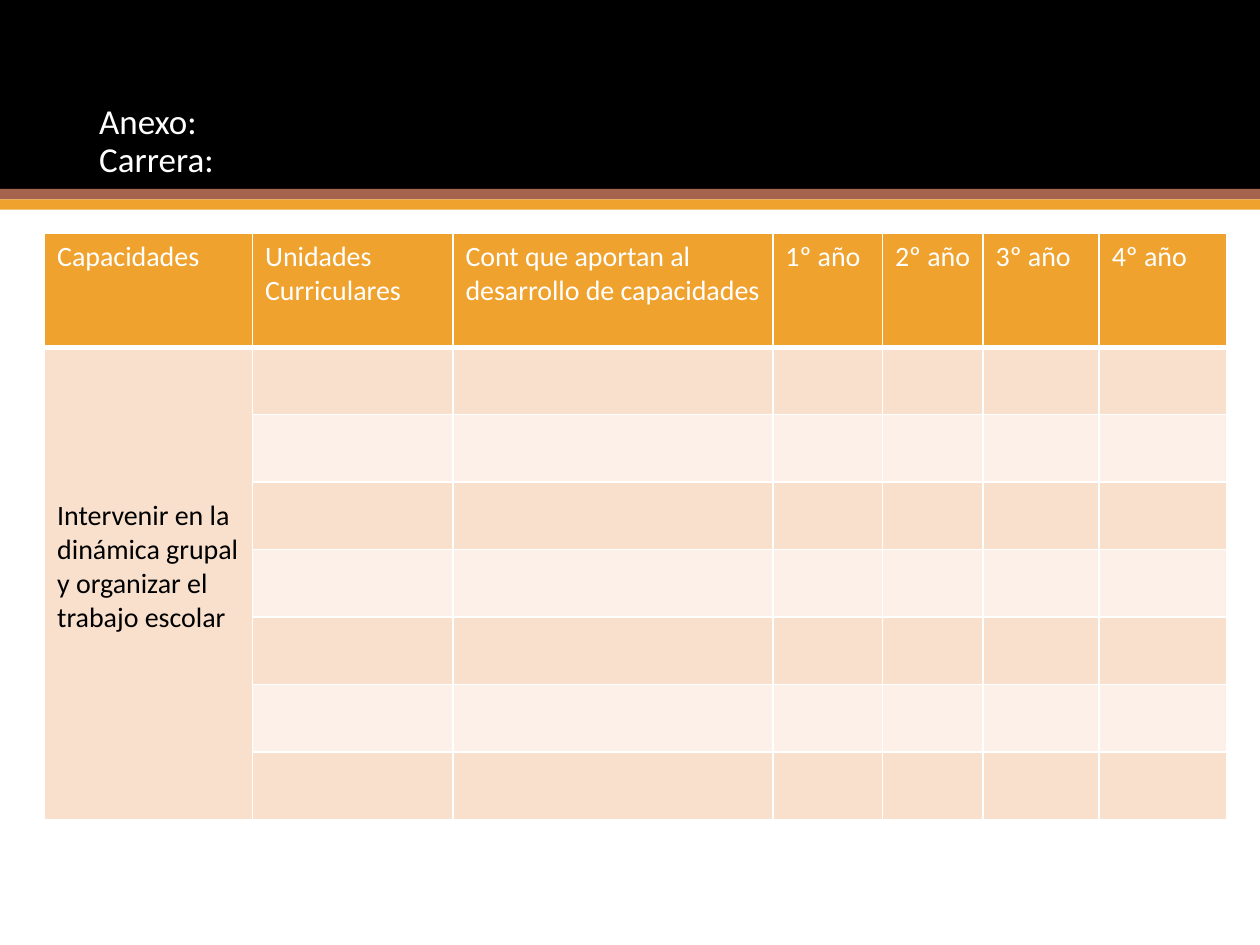
from lxml.etree import SubElement
from pptx import Presentation
from pptx.dml.color import RGBColor
from pptx.enum.shapes import MSO_SHAPE
from pptx.enum.text import MSO_ANCHOR
from pptx.oxml.ns import qn
from pptx.util import Cm, Pt

COLORS = {
    "black": "000000",
    "white": "FFFFFF",
    "brown": "A5644E",
    "orange": "F0A22E",
    "peach": "F9E0CD",
    "cream": "FCF0E8",
}
HEADINGS = [
    "Capacidades",
    "Unidades Curriculares",
    "Cont que aportan al desarrollo de capacidades",
    "1º año",
    "2º año",
    "3º año",
    "4º año",
]
COLUMN_WIDTHS = [4.19, 4.04, 6.45, 2.21, 2.03, 2.34, 2.57]
HEADER_HEIGHT = 2.3
ROW_HEIGHT = 1.36
BODY_ROWS = 7


class SlideBuilder:
    font = "Calibri"

    def __init__(self, page):
        self.page = page

    def band(self, top, height, color):
        band = self.page.shapes.add_shape(
            MSO_SHAPE.RECTANGLE, Cm(0), Cm(top), Cm(25.4), Cm(height))
        band.shadow.inherit = False
        band.fill.solid()
        band.fill.fore_color.rgb = RGBColor.from_string(COLORS[color])
        band.line.fill.background()

    def span(self, para, text, size, color):
        span = para.add_run()
        span.text = text
        span.font.name = self.font
        span.font.size = Pt(size)
        span.font.color.rgb = RGBColor.from_string(COLORS[color])

    def title(self, lines, left, top, width, height):
        box = self.page.shapes.add_textbox(Cm(left), Cm(top), Cm(width), Cm(height))
        frame = box.text_frame
        frame.word_wrap = True
        frame.vertical_anchor = MSO_ANCHOR.MIDDLE
        para = frame.paragraphs[0]
        para.line_spacing = 0.9
        for index, line in enumerate(lines):
            if index:
                para.add_line_break()
            self.span(para, line, 20, "white")

    def table(self, left, top, widths, heights):
        frame = self.page.shapes.add_table(
            len(heights), len(widths), Cm(left), Cm(top),
            Cm(sum(widths)), Cm(sum(heights)))
        table = frame.table
        for column, width in zip(table.columns, widths):
            column.width = Cm(width)
        for row, height in zip(table.rows, heights):
            row.height = Cm(height)
        return table

    def cell(self, cell, color, top_line=1, bottom_line=1):
        properties = cell._tc.get_or_add_tcPr()
        # Borders come before the fill in the cell properties
        for side, width in zip("LRTB", (1, 1, top_line, bottom_line)):
            line = SubElement(properties, qn(f"a:ln{side}"), w=str(Pt(width)))
            fill = SubElement(line, qn("a:solidFill"))
            SubElement(fill, qn("a:srgbClr"), val=COLORS["white"])
        cell.fill.solid()
        cell.fill.fore_color.rgb = RGBColor.from_string(COLORS[color])


def main():
    deck = Presentation()
    deck.slide_width, deck.slide_height = Cm(25.4), Cm(19.05)
    builder = SlideBuilder(deck.slides.add_slide(deck.slide_layouts[6]))

    # Header bands
    builder.band(0, 3.81, "black")
    builder.band(3.81, 0.21, "brown")
    builder.band(4.02, 0.21, "orange")

    # Title
    builder.title(["Anexo:", "Carrera:"], 1.75, 1.02, 21.9, 3.68)

    # Table grid
    heights = [HEADER_HEIGHT] + [ROW_HEIGHT] * BODY_ROWS
    table = builder.table(0.9, 4.7, COLUMN_WIDTHS, heights)

    # Heading row
    for column, heading in enumerate(HEADINGS):
        cell = table.cell(0, column)
        builder.cell(cell, "orange", bottom_line=3)
        builder.span(cell.text_frame.paragraphs[0], heading, 16, "white")

    # Striped body
    for row in range(1, BODY_ROWS + 1):
        for column in range(len(HEADINGS)):
            color = "peach" if row % 2 or column == 0 else "cream"
            builder.cell(table.cell(row, column), color,
                         top_line=3 if row == 1 else 1)

    # Capacity that spans every body row
    capacity = table.cell(1, 0)
    capacity.merge(table.cell(BODY_ROWS, 0))
    capacity.margin_top = Cm(3.05)
    builder.span(capacity.text_frame.paragraphs[0],
                 "Intervenir en la dinámica grupal y organizar el trabajo escolar",
                 16, "black")

    deck.save("out.pptx")


if __name__ == "__main__":
    main()
